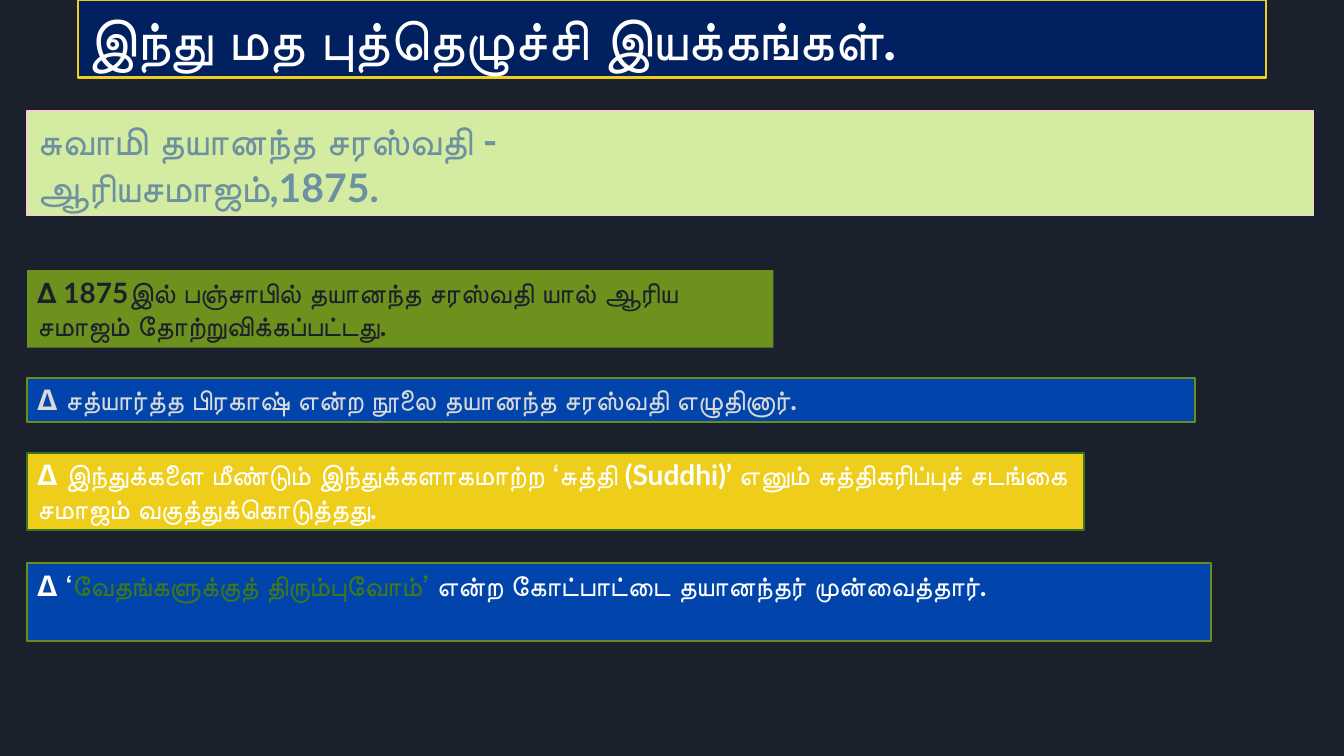
from dataclasses import dataclass
from typing import Optional

from pptx import Presentation
from pptx.dml import color
from pptx.enum import shapes, text
from pptx.slide import Slide
from pptx.util import Inches, Pt

FONT = "Lato"
LEFT = 0.27
WHITE = "FFFFFF"
BLUE = "0145AC"
GOLD = "EECE1A"
OLIVE = "698D1B"


@dataclass
class Phrase:
    wording: str
    colour: str


@dataclass
class Banner:
    top: float
    width: float
    height: float
    fill: str
    paragraphs: list[list[Phrase]]
    left: float = LEFT
    size: int = 20
    line: Optional[str] = None
    line_width: float = 1.5


BANNERS = [
    Banner(0, 11.79, 0.77, "002060",
           [[Phrase("இந்து மத புத்தெழுச்சி இயக்கங்கள்.", WHITE)]],
           left=0.77, size=40, line=GOLD),
    Banner(1.1, 12.76, 1.04, "D4ECA1",
           [[Phrase("சுவாமி தயானந்த சரஸ்வதி -", "6D91A0")],
            [Phrase("ஆரியசமாஜம்,1875.", "6D91A0")]],
           size=28, line="F8D0CB", line_width=1),
    Banner(2.68, 7.4, 0.77, "6C911C",
           [[Phrase("∆ 1875இல் பஞ்சாபில் தயானந்த சரஸ்வதி யால் ஆரிய சமாஜம் "
                    "தோற்றுவிக்கப்பட்டது.", "1B212C")]]),
    Banner(3.75, 11.58, 0.44, BLUE,
           [[Phrase("∆ சத்யார்த்த பிரகாஷ் என்ற நூலை தயானந்த சரஸ்வதி எழுதினார்.",
                    "D9D9D9")]],
           line=OLIVE),
    Banner(4.49, 10.48, 0.77, GOLD,
           [[Phrase("∆ இந்துக்களை மீண்டும் இந்துக்களாகமாற்ற ‘சுத்தி (Suddhi)’ எனும் "
                    "சுத்திகரிப்புச் சடங்கை சமாஜம் வகுத்துக்கொடுத்தது.", WHITE)]],
           line="3D7418"),
    Banner(5.59, 11.74, 0.77, BLUE,
           [[Phrase("∆ ‘", WHITE),
             Phrase("வேதங்களுக்குத் திரும்புவோம்’", "3F7818"),
             Phrase(" என்ற கோட்பாட்டை தயானந்தர் முன்வைத்தார்.", WHITE)]],
           line=OLIVE),
]


def rgb(value: str) -> color.RGBColor:
    return color.RGBColor.from_string(value)


def draw_banner(slide: Slide, banner: Banner) -> None:
    box = slide.shapes.add_shape(
        shapes.MSO_SHAPE.RECTANGLE, Inches(banner.left), Inches(banner.top),
        Inches(banner.width), Inches(banner.height))
    box.shadow.inherit = False
    box.fill.solid()
    box.fill.fore_color.rgb = rgb(banner.fill)
    if banner.line:
        box.line.color.rgb = rgb(banner.line)
        box.line.width = Pt(banner.line_width)
    else:
        box.line.fill.background()

    frame = box.text_frame
    frame.word_wrap = True
    frame.auto_size = text.MSO_AUTO_SIZE.SHAPE_TO_FIT_TEXT
    frame.vertical_anchor = text.MSO_ANCHOR.TOP
    for index, phrases in enumerate(banner.paragraphs):
        paragraph = frame.add_paragraph() if index else frame.paragraphs[0]
        paragraph.alignment = text.PP_ALIGN.LEFT
        for phrase in phrases:
            run = paragraph.add_run()
            run.text = phrase.wording
            run.font.name = FONT
            run.font.size = Pt(banner.size)
            run.font.bold = True
            run.font.color.rgb = rgb(phrase.colour)


def main() -> None:
    deck = Presentation()
    deck.slide_width = Inches(13.33)
    deck.slide_height = Inches(7.5)
    slide = deck.slides.add_slide(deck.slide_layouts[6])
    slide.background.fill.solid()
    slide.background.fill.fore_color.rgb = rgb("1B212C")
    for banner in BANNERS:
        draw_banner(slide, banner)
    deck.save("out.pptx")


if __name__ == "__main__":
    main()
